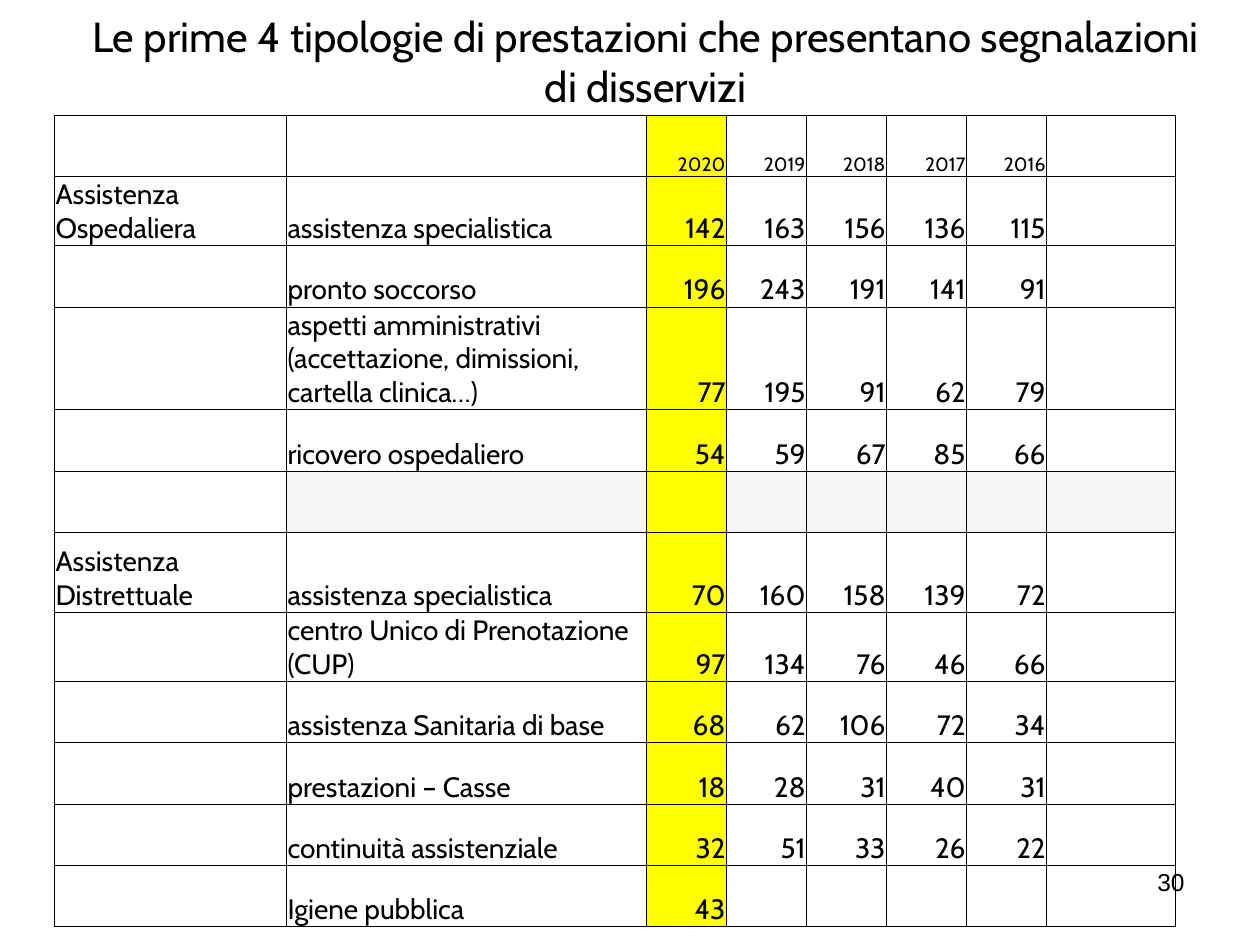
from lxml import etree
from pptx import Presentation
from pptx.dml.color import RGBColor
from pptx.enum.text import MSO_ANCHOR, PP_ALIGN
from pptx.oxml.ns import qn
from pptx.util import Pt

LEFT, CENTER, RIGHT = PP_ALIGN.LEFT, PP_ALIGN.CENTER, PP_ALIGN.RIGHT
BOTTOM = MSO_ANCHOR.BOTTOM
TITLE_LAYOUT = 5

TITLE = "Le prime 4 tipologie di prestazioni che presentano segnalazioni di disservizi"
PAGE_NUMBER = "30"
YEARS = ["2020", "2019", "2018", "2017", "2016"]
HOSPITAL = [
    ("assistenza specialistica", [142, 163, 156, 136, 115]),
    ("pronto soccorso", [196, 243, 191, 141, 91]),
    ("aspetti amministrativi (accettazione, dimissioni, cartella clinica…)",
     [77, 195, 91, 62, 79]),
    ("ricovero ospedaliero", [54, 59, 67, 85, 66]),
]
DISTRICT = [
    ("assistenza specialistica", [70, 160, 158, 139, 72]),
    ("centro Unico di Prenotazione (CUP)", [97, 134, 76, 46, 66]),
    ("assistenza Sanitaria di base", [68, 62, 106, 72, 34]),
    ("prestazioni – Casse", [18, 28, 31, 40, 31]),
    ("continuità assistenziale", [32, 51, 33, 26, 22]),
    ("Igiene pubblica", [43]),
]

COLORS = {"text": "000000", "border": "000000", "cell": "FFFFFF",
          "current_year": "FFFF00", "separator": "F5F5F5"}
FONT, PAGE_FONT = "Cabin", "Arial"
TABLE_LEFT, TABLE_TOP = 31, 66
COLUMN_WIDTHS = [132.6, 206] + [45.75] * len(YEARS) + [73.2]
ROW_HEIGHT, TALL_ROW_HEIGHT = 35, 46
TALL_ROWS = (3, 6)
CURRENT_YEAR_COLUMN = 2
SEPARATOR_ROW = len(HOSPITAL) + 1


def section_rows(section, services):
    """Name the section on its first row only."""
    return [[section if i == 0 else "", service, *map(str, counts)]
            for i, (service, counts) in enumerate(services)]


def write(frame, text, size, alignment, font=FONT):
    paragraph = frame.paragraphs[0]
    paragraph.alignment = alignment
    run = paragraph.add_run()
    run.text = text
    run.font.size = Pt(size)
    run.font.name = font
    run.font.color.rgb = RGBColor.from_string(COLORS["text"])


def add_borders(cell):
    properties = cell._tc.get_or_add_tcPr()
    for side in ("lnL", "lnR", "lnT", "lnB"):
        line = etree.SubElement(properties, qn(f"a:{side}"), w=str(Pt(0.5)))
        fill = etree.SubElement(line, qn("a:solidFill"))
        etree.SubElement(fill, qn("a:srgbClr"), val=COLORS["border"])


def cell_color(row, column):
    if column == CURRENT_YEAR_COLUMN:
        return COLORS["current_year"]
    if row == SEPARATOR_ROW and column > 0:
        return COLORS["separator"]
    return COLORS["cell"]


def add_title(slide):
    title = slide.shapes.title
    title.left, title.top, title.width, title.height = Pt(42.5), Pt(37.5), Pt(653), Pt(43)
    frame = title.text_frame
    frame.word_wrap = True
    frame.vertical_anchor = BOTTOM
    frame.margin_bottom = Pt(17)
    write(frame, TITLE, 24, CENTER)


def add_reports_table(slide):
    rows = [["", "", *YEARS],
            *section_rows("Assistenza Ospedaliera", HOSPITAL),
            [],
            *section_rows("Assistenza Distrettuale", DISTRICT)]
    heights = [TALL_ROW_HEIGHT if r in TALL_ROWS else ROW_HEIGHT for r in range(len(rows))]
    table = slide.shapes.add_table(
        len(rows), len(COLUMN_WIDTHS), Pt(TABLE_LEFT), Pt(TABLE_TOP),
        Pt(sum(COLUMN_WIDTHS)), Pt(sum(heights))).table
    table.first_row = table.horz_banding = False
    for column, width in zip(table.columns, COLUMN_WIDTHS):
        column.width = Pt(width)
    for r, (texts, height) in enumerate(zip(rows, heights)):
        table.rows[r].height = Pt(height)
        for c in range(len(COLUMN_WIDTHS)):
            cell = table.cell(r, c)
            add_borders(cell)
            cell.fill.solid()
            cell.fill.fore_color.rgb = RGBColor.from_string(cell_color(r, c))
            if c < len(texts) and texts[c]:
                cell.vertical_anchor = BOTTOM
                cell.margin_left = cell.margin_top = cell.margin_right = Pt(0.75)
                cell.margin_bottom = 0
                write(cell.text_frame, texts[c], 11 if r == 0 else 16,
                      RIGHT if c >= CURRENT_YEAR_COLUMN else LEFT)


def add_page_number(slide):
    frame = slide.shapes.add_textbox(Pt(516), Pt(492), Pt(168), Pt(37.5)).text_frame
    frame.word_wrap = True
    write(frame, PAGE_NUMBER, 14, RIGHT, PAGE_FONT)


def main():
    presentation = Presentation()
    presentation.slide_width, presentation.slide_height = Pt(720), Pt(540)
    slide = presentation.slides.add_slide(presentation.slide_layouts[TITLE_LAYOUT])
    add_title(slide)
    add_reports_table(slide)
    add_page_number(slide)
    presentation.save("out.pptx")


if __name__ == "__main__":
    main()
